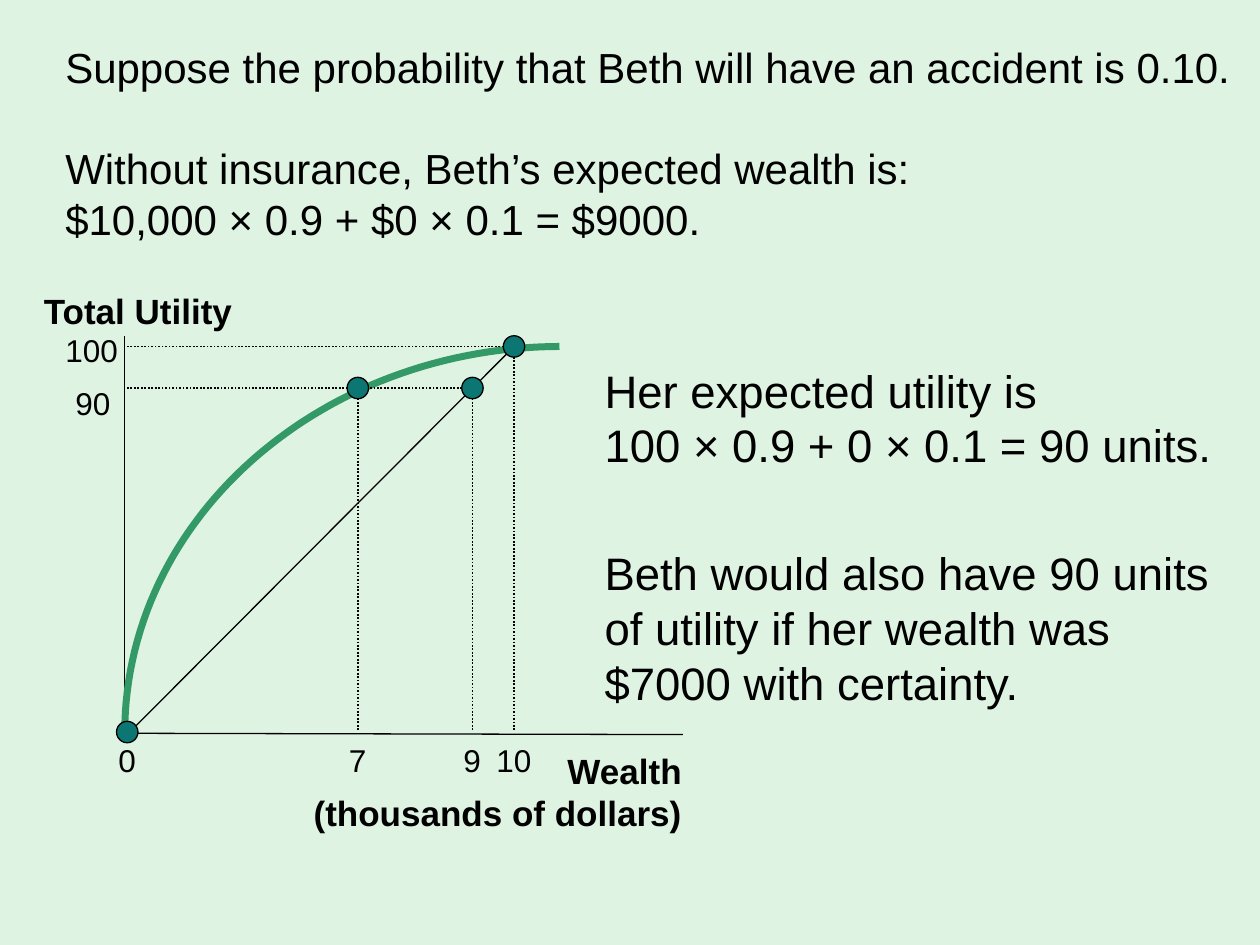
from lxml import etree
from pptx import Presentation
from pptx.dml.color import RGBColor
from pptx.enum.dml import MSO_LINE
from pptx.enum.shapes import MSO_CONNECTOR, MSO_SHAPE
from pptx.enum.text import PP_ALIGN
from pptx.oxml.ns import qn
from pptx.util import Inches, Pt

STRAIGHT = MSO_CONNECTOR.STRAIGHT
OVAL = MSO_SHAPE.OVAL
DOTTED = MSO_LINE.ROUND_DOT
LEFT, RIGHT = PP_ALIGN.LEFT, PP_ALIGN.RIGHT

COLORS = {"background": "DFF3E2", "ink": "000000", "curve": "339966", "point": "0C7673"}
FONT = "Arial"
CURVE_STEPS = 60
DOT_SIZE = 0.17


def color(name):
    return RGBColor.from_string(COLORS[name])


def add_text(slide, box, paragraphs, size, bold=False, align=LEFT, indent=0):
    frame = slide.shapes.add_textbox(*map(Inches, box)).text_frame
    frame.word_wrap = True
    for index, (text, space_before) in enumerate(paragraphs):
        paragraph = frame.paragraphs[0] if index == 0 else frame.add_paragraph()
        paragraph.text = text
        paragraph.alignment = align
        paragraph.space_before = Pt(space_before)
        if indent:
            properties = paragraph._p.get_or_add_pPr()
            properties.set("marL", str(Inches(indent)))
            properties.set("indent", "0")
        paragraph.font.name = FONT
        paragraph.font.size = Pt(size)
        paragraph.font.bold = bold
        paragraph.font.color.rgb = color("ink")


def add_line(slide, start, end, dotted=False):
    line = slide.shapes.add_connector(STRAIGHT, *map(Inches, (*start, *end)))
    line.line.color.rgb = color("ink")
    line.line.width = Pt(1 if dotted else 0.75)
    if dotted:
        line.line.dash_style = DOTTED
    etree.SubElement(line._element.spPr, qn("a:effectLst"))


def add_dot(slide, x, y):
    corner = (x - DOT_SIZE / 2, y - DOT_SIZE / 2)
    dot = slide.shapes.add_shape(OVAL, *map(Inches, (*corner, DOT_SIZE, DOT_SIZE)))
    dot.shadow.inherit = False
    dot.fill.solid()
    dot.fill.fore_color.rgb = color("point")
    dot.line.color.rgb = color("ink")
    dot.line.width = Pt(0.75)


def add_utility_curve(slide, controls):
    def bezier(t):
        weights = ((1 - t) ** 3, 3 * t * (1 - t) ** 2, 3 * t**2 * (1 - t), t**3)
        return tuple(
            Inches(sum(w * point[axis] for w, point in zip(weights, controls)))
            for axis in (0, 1)
        )

    points = [bezier(step / CURVE_STEPS) for step in range(CURVE_STEPS + 1)]
    builder = slide.shapes.build_freeform(*points[0])
    builder.add_line_segments(points[1:], close=False)
    curve = builder.convert_to_shape()
    curve.shadow.inherit = False
    curve.fill.background()
    curve.line.color.rgb = color("curve")
    curve.line.width = Pt(4)


def build_introduction(slide, box):
    add_text(slide, box, [
        ("Suppose the probability that Beth will have an accident is 0.10.", 0),
        ("Without insurance, Beth’s expected wealth is:", 29),
        ("$10,000 × 0.9 + $0 × 0.1 = $9000.", 0),
    ], 24)


def build_conclusions(slide, box):
    add_text(slide, box, [
        ("Her expected utility is \v100 × 0.9 + 0 × 0.1 = 90 units.", 0),
        ("Beth would also have 90 units of utility if her wealth was $7000 with certainty.", 42),
    ], 26, indent=0.12)


def build_utility_graph(slide, box):
    left, top, width, height = box
    axis_x, axis_y = left + 0.74, top + 3.57
    wealth_x = {"0": left + 0.76, "7": left + 2.59, "9": left + 3.5, "10": left + 3.83}
    utility_y = {"0": axis_y - 0.01, "90": top + 0.83, "100": top + 0.5}
    outcomes = [("0", "0"), ("7", "90"), ("9", "90"), ("10", "100")]

    add_line(slide, (axis_x, top + 0.42), (axis_x, axis_y))
    add_line(slide, (axis_x, axis_y), (left + 5.17, axis_y + 0.01))
    add_text(slide, (left, top, 2, 0.43), [("Total Utility", 0)], 20, bold=True)
    add_text(slide, (left + 2, top + 3.65, width - 2, height - 3.65),
             [("Wealth\v(thousands of dollars)", 0)], 20, bold=True, align=RIGHT)

    add_utility_curve(slide, [
        (left + 4.19, utility_y["100"]),
        (left + 2.28, utility_y["100"] + 0.01),
        (axis_x, top + 1.88),
        (axis_x, axis_y),
    ])
    add_line(slide, (wealth_x["0"], axis_y + 0.01), (wealth_x["10"], utility_y["100"]))

    for wealth, utility in outcomes[1:]:
        add_line(slide, (wealth_x[wealth], utility_y[utility]),
                 (wealth_x[wealth], axis_y - 0.02), dotted=True)
    for wealth, utility in outcomes[2:]:
        add_line(slide, (wealth_x[wealth], utility_y[utility]),
                 (wealth_x["0"], utility_y[utility]), dotted=True)

    for wealth, x in wealth_x.items():
        half_text = 0.07 * len(wealth)
        add_text(slide, (x - 0.1 - half_text, top + 3.58, 0.35 + half_text, 0.4),
                 [(wealth, 0)], 18)
    for utility, offset_x, offset_y in [("100", 0.17, 0.33), ("90", 0.25, 0.75)]:
        add_text(slide, (left + offset_x, top + offset_y, 0.67, 0.4), [(utility, 0)], 18)

    for wealth, utility in outcomes:
        add_dot(slide, wealth_x[wealth], utility_y[utility])


def main():
    presentation = Presentation()
    presentation.slide_width = Inches(10)
    presentation.slide_height = Inches(7.5)
    slide = presentation.slides.add_slide(presentation.slide_layouts[6])
    slide.background.fill.solid()
    slide.background.fill.fore_color.rgb = color("background")
    build_utility_graph(slide, (0.25, 2.25, 5.26, 4.42))
    build_conclusions(slide, (4.58, 2.83, 5.34, 2.98))
    build_introduction(slide, (0.42, 0.28, 9.5, 1.72))
    presentation.save("out.pptx")


if __name__ == "__main__":
    main()
